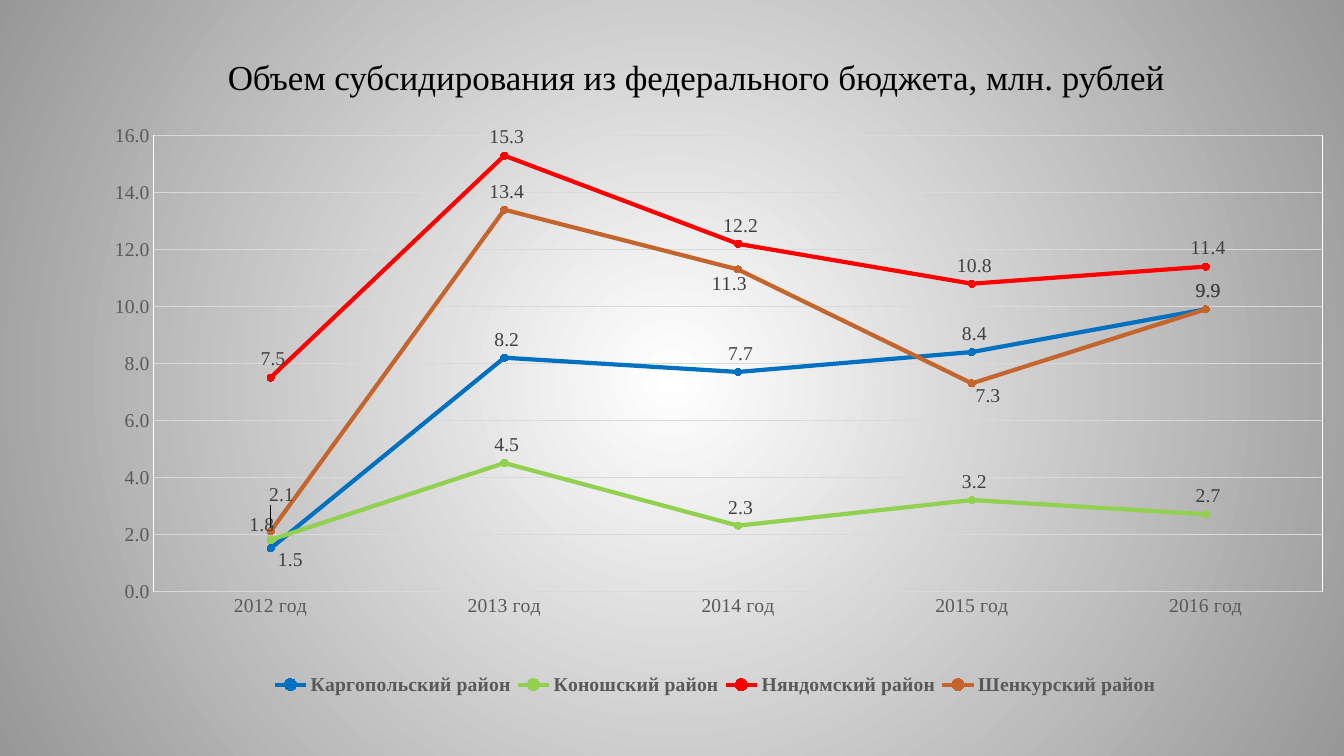
from pptx import Presentation
from pptx.chart.data import CategoryChartData
from pptx.dml.color import RGBColor
from pptx.enum.chart import (XL_CHART_TYPE, XL_LABEL_POSITION as LabelPos, XL_LEGEND_POSITION,
                             XL_MARKER_STYLE, XL_TICK_MARK)
from pptx.enum.text import MSO_ANCHOR, PP_ALIGN
from pptx.oxml import parse_xml
from pptx.oxml.ns import nsdecls
from pptx.util import Inches, Pt

TITLE = "Объем субсидирования из федерального бюджета, млн. рублей"
YEARS = ["2012 год", "2013 год", "2014 год", "2015 год", "2016 год"]
BLUE = RGBColor(0x00, 0x70, 0xC0)
GREEN = RGBColor(0x92, 0xD0, 0x50)
RED = RGBColor(0xFF, 0x00, 0x00)
BROWN = RGBColor(0xC4, 0x65, 0x2D)
BLACK = RGBColor(0x00, 0x00, 0x00)
WHITE = RGBColor(0xFF, 0xFF, 0xFF)
EDGE_GRAY = RGBColor(0x97, 0x97, 0x97)
GRID_GRAY = RGBColor(0xD9, 0xD9, 0xD9)
AXIS_GRAY = RGBColor(0x59, 0x59, 0x59)
LABEL_GRAY = RGBColor(0x40, 0x40, 0x40)
# name, colour, values, {point: label shift as shares of the chart}
DISTRICTS = [
    ("Каргопольский район", BLUE, (1.5, 8.2, 7.7, 8.4, 9.9), {0: (0.014, 0.048)}),
    ("Коношский район", GREEN, (1.8, 4.5, 2.3, 3.2, 2.7), {0: (-0.009, 0.005)}),
    ("Няндомский район", RED, (7.5, 15.3, 12.2, 10.8, 11.4), {}),
    ("Шенкурский район", BROWN, (2.1, 13.4, 11.3, 7.3, 9.9),
     {0: (0.007, -0.03), 2: (-0.009, 0.053), 3: (0.011, 0.05)}),
]
FONT = "Times New Roman"
NUMBER_FORMAT = r"#\ ##0.0"
LEFT, TITLE_TOP, CHART_TOP = Inches(0.81), Inches(0.29), Inches(1.23)


def style(font, color, size=14, bold=False):
    font.name, font.size, font.bold = FONT, Pt(size), bold
    font.color.rgb = color


def layout_xml(x, y, w=None, h=None, inner=False):
    """Manual layout: a frame when w and h are given, otherwise a shift."""
    tags = [("layoutTarget", "inner")] if inner else []
    if w:
        tags += [("xMode", "edge"), ("yMode", "edge")]
    tags += [("x", x), ("y", y)]
    if w:
        tags += [("w", w), ("h", h)]
    body = "".join(f'<c:{tag} val="{val}"/>' for tag, val in tags)
    return parse_xml(f'<c:layout {nsdecls("c")}><c:manualLayout>{body}</c:manualLayout></c:layout>')


def drop_layout(parent):
    for old in parent.xpath("c:layout"):
        parent.remove(old)


def paint_background(slide):
    fill = slide.background.fill
    fill.gradient()
    for stop, color in zip(fill.gradient_stops, (WHITE, EDGE_GRAY)):
        stop.color.rgb = color
    lin = slide.element.xpath("p:cSld/p:bg//a:lin")[0]
    lin.getparent().replace(lin, parse_xml(
        f'<a:path {nsdecls("a")} path="circle">'
        '<a:fillToRect l="50000" t="50000" r="50000" b="50000"/></a:path>'))


def add_title(slide):
    title = slide.shapes.title
    title.left, title.top, title.width, title.height = LEFT, TITLE_TOP, Inches(12.19), CHART_TOP - TITLE_TOP
    tf = title.text_frame
    tf.vertical_anchor = MSO_ANCHOR.MIDDLE
    p = tf.paragraphs[0]
    p.alignment = PP_ALIGN.CENTER
    r = p.add_run()
    r.text = TITLE
    style(r.font, BLACK, 25)


def style_axes(chart):
    cat, val = chart.category_axis, chart.value_axis
    for axis in (cat, val):
        axis.major_tick_mark = axis.minor_tick_mark = XL_TICK_MARK.NONE
        style(axis.tick_labels.font, AXIS_GRAY)
    val.minimum_scale, val.maximum_scale, val.major_unit = 0, 16, 2
    val.tick_labels.number_format = NUMBER_FORMAT
    val.tick_labels.number_format_is_linked = False
    val.format.line.fill.background()
    val.has_major_gridlines = True
    for line in (cat.format.line, val.major_gridlines.format.line):
        line.color.rgb, line.width = GRID_GRAY, Pt(0.75)


def style_series(series, color, shifts):
    series.smooth = False
    series.format.line.color.rgb, series.format.line.width = color, Pt(3)
    marker = series.marker
    marker.style, marker.size = XL_MARKER_STYLE.CIRCLE, 5
    marker.format.fill.solid()
    marker.format.fill.fore_color.rgb = color
    marker.format.line.color.rgb = color
    labels = series.data_labels
    labels.show_value, labels.position = True, LabelPos.ABOVE
    labels.number_format, labels.number_format_is_linked = NUMBER_FORMAT, False
    style(labels.font, LABEL_GRAY)
    for point, shift in shifts.items():
        label = series.points[point].data_label
        label.position = LabelPos.ABOVE
        style(label.font, LABEL_GRAY)
        idx = labels._element.xpath(f'c:dLbl/c:idx[@val="{point}"]')[0]
        idx.addnext(layout_xml(*shift))


def add_subsidy_chart(slide):
    data = CategoryChartData(number_format=NUMBER_FORMAT)
    data.categories = YEARS
    for name, _, values, _ in DISTRICTS:
        data.add_series(name, values)
    chart = slide.shapes.add_chart(XL_CHART_TYPE.LINE_MARKERS, LEFT, CHART_TOP,
                                   Inches(12.32), Inches(6.14), data).chart
    chart.has_title = False
    chart.font.name, chart.font.size = "Calibri", Pt(10)
    plot = chart.plots[0]
    plot.vary_by_categories = False
    style_axes(chart)
    for series, (_, color, _, shifts) in zip(plot.series, DISTRICTS):
        style_series(series, color, shifts)

    chart.has_legend = True
    legend = chart.legend
    legend.position, legend.include_in_layout = XL_LEGEND_POSITION.BOTTOM, False
    style(legend.font, AXIS_GRAY, bold=True)
    drop_layout(legend._element)
    legend._element.xpath("c:legendPos")[0].addnext(layout_xml(0.15, 0.876, 0.72, 0.06))

    area = chart._chartSpace.xpath("c:chart/c:plotArea")[0]
    drop_layout(area)
    area.insert(0, layout_xml(0.058, 0.019, 0.941, 0.736, inner=True))
    area.append(parse_xml(
        f'<c:spPr {nsdecls("c", "a")}><a:noFill/><a:ln w="{Pt(0.75)}"><a:solidFill>'
        f'<a:srgbClr val="{WHITE}"/></a:solidFill></a:ln></c:spPr>'))


def main():
    prs = Presentation()
    prs.slide_width, prs.slide_height = Inches(13.33), Inches(7.5)
    slide = prs.slides.add_slide(prs.slide_layouts[5])
    paint_background(slide)
    add_title(slide)
    add_subsidy_chart(slide)
    prs.save("out.pptx")


if __name__ == "__main__":
    main()
